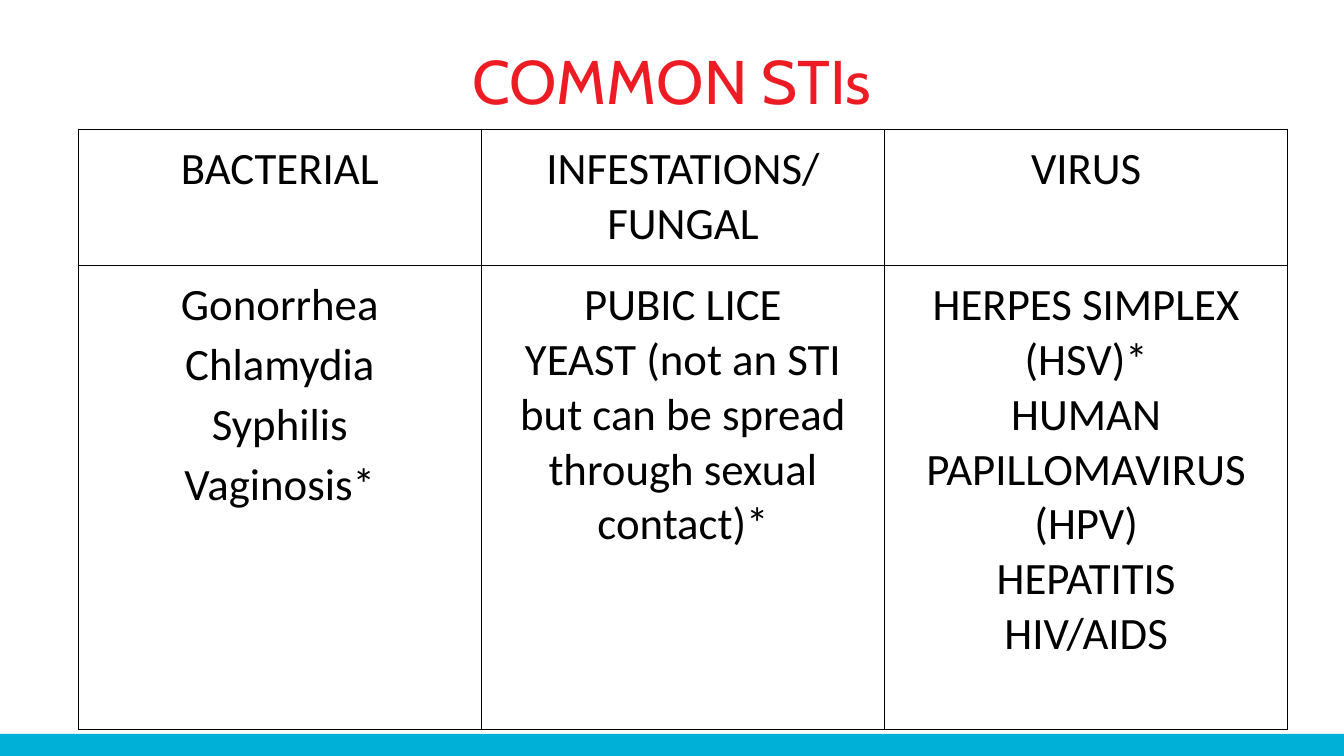
"""Build a slide with a three-column table of common STIs."""
from dataclasses import dataclass

from lxml.etree import SubElement
from pptx import Presentation
from pptx.dml.color import RGBColor
from pptx.enum.shapes import MSO_SHAPE
from pptx.enum.text import MSO_ANCHOR, PP_ALIGN
from pptx.oxml.ns import qn
from pptx.slide import Slide
from pptx.table import _Cell
from pptx.text.text import TextFrame
from pptx.util import Inches, Length, Pt


@dataclass(frozen=True)
class Theme:
    """Colours, fonts and sizes of the slide."""

    accent: str = "00B0D7"
    title: str = "ED1C24"
    body: str = "000000"
    paper: str = "FFFFFF"
    title_font: str = "Cabin"
    body_font: str = "Calibri"
    title_size: float = 44
    body_size: float = 32
    border: float = 0.75


@dataclass(frozen=True)
class Area:
    """A region measured in grid columns and rows."""

    column: float
    row: float
    columns: float
    rows: float


@dataclass(frozen=True)
class Category:
    """One table column: a heading and its infections."""

    heading: str
    infections: tuple[str, ...]
    space_before: float = 0


THEME = Theme()
SLIDE_WIDTH, SLIDE_HEIGHT = Inches(13.33), Inches(7.5)
GRID_COLUMNS, GRID_ROWS = 40, 30
HEADING_ROWS, INFECTION_ROWS = 5.4, 18.44
TITLE_AREA = Area(2, 0.84, 36, 5)
TABLE_AREA = Area(2.33, 5.12, 36, HEADING_ROWS + INFECTION_ROWS)
FOOTER_AREA = Area(0, 29.12, GRID_COLUMNS, 0.88)
CELL_MARGIN = Inches(0.13)
CATEGORIES = (
    Category("BACTERIAL", ("Gonorrhea", "Chlamydia", "Syphilis", "Vaginosis*"), 3.6),
    Category(
        "INFESTATIONS/FUNGAL",
        ("PUBIC LICE", "YEAST (not an STI but can be spread through sexual contact)*"),
    ),
    Category(
        "VIRUS",
        ("HERPES SIMPLEX (HSV)*", "HUMAN PAPILLOMAVIRUS (HPV)", "HEPATITIS", "HIV/AIDS"),
    ),
)


def across(columns: float) -> Length:
    """Convert grid columns to a length."""
    return Length(round(SLIDE_WIDTH * columns / GRID_COLUMNS))


def down(rows: float) -> Length:
    """Convert grid rows to a length."""
    return Length(round(SLIDE_HEIGHT * rows / GRID_ROWS))


def box(area: Area) -> tuple[Length, Length, Length, Length]:
    """Return left, top, width and height of an area."""
    return across(area.column), down(area.row), across(area.columns), down(area.rows)


def format_text(
    text_frame: TextFrame, font: str, size: float, colour: str, space_before: float = 0
) -> None:
    """Centre every paragraph and format its runs."""
    for paragraph in text_frame.paragraphs:
        paragraph.alignment = PP_ALIGN.CENTER
        paragraph.space_before = Pt(space_before)
        for run in paragraph.runs:
            run.font.name = font
            run.font.size = Pt(size)
            run.font.color.rgb = RGBColor.from_string(colour)


def draw_footer(slide: Slide) -> None:
    """Draw the coloured bar along the bottom edge."""
    shape = slide.shapes.add_shape(MSO_SHAPE.RECTANGLE, *box(FOOTER_AREA))
    shape.shadow.inherit = False
    shape.fill.solid()
    shape.fill.fore_color.rgb = RGBColor.from_string(THEME.accent)
    shape.line.fill.background()


def draw_title(slide: Slide, title: str) -> None:
    """Draw the centred slide title."""
    text_frame = slide.shapes.add_textbox(*box(TITLE_AREA)).text_frame
    text_frame.word_wrap = True
    text_frame.vertical_anchor = MSO_ANCHOR.MIDDLE
    text_frame.text = title
    text_frame.paragraphs[0].line_spacing = 0.9
    format_text(text_frame, THEME.title_font, THEME.title_size, THEME.title)


def add_borders(cell: _Cell) -> None:
    """Outline a cell on all four sides."""
    properties = cell._tc.get_or_add_tcPr()
    for side in ("lnL", "lnR", "lnT", "lnB"):
        line = SubElement(properties, qn(f"a:{side}"), w=str(Pt(THEME.border)))
        fill = SubElement(line, qn("a:solidFill"))
        SubElement(fill, qn("a:srgbClr"), val=THEME.body)


def fill_cell(cell: _Cell, text: str, space_before: float = 0) -> None:
    """Write and style the contents of a cell."""
    add_borders(cell)
    cell.fill.solid()
    cell.fill.fore_color.rgb = RGBColor.from_string(THEME.paper)
    cell.margin_left = cell.margin_right = CELL_MARGIN
    cell.margin_top = cell.margin_bottom = CELL_MARGIN
    cell.text_frame.text = text
    format_text(
        cell.text_frame, THEME.body_font, THEME.body_size, THEME.body, space_before
    )


def draw_table(slide: Slide, categories: tuple[Category, ...]) -> None:
    """Draw one table column for each category."""
    table = slide.shapes.add_table(2, len(categories), *box(TABLE_AREA)).table
    table.first_row = False
    table.horz_banding = False
    for row, height in zip(table.rows, (HEADING_ROWS, INFECTION_ROWS)):
        row.height = down(height)
    for index, category in enumerate(categories):
        table.columns[index].width = across(TABLE_AREA.columns / len(categories))
        fill_cell(table.cell(0, index), category.heading)
        infections = "\n".join(category.infections)
        fill_cell(table.cell(1, index), infections, category.space_before)


def main() -> None:
    """Build and save the presentation."""
    presentation = Presentation()
    presentation.slide_width, presentation.slide_height = SLIDE_WIDTH, SLIDE_HEIGHT
    slide = presentation.slides.add_slide(presentation.slide_layouts[6])
    draw_footer(slide)
    draw_title(slide, "COMMON STIs")
    draw_table(slide, CATEGORIES)
    presentation.save("out.pptx")


if __name__ == "__main__":
    main()
